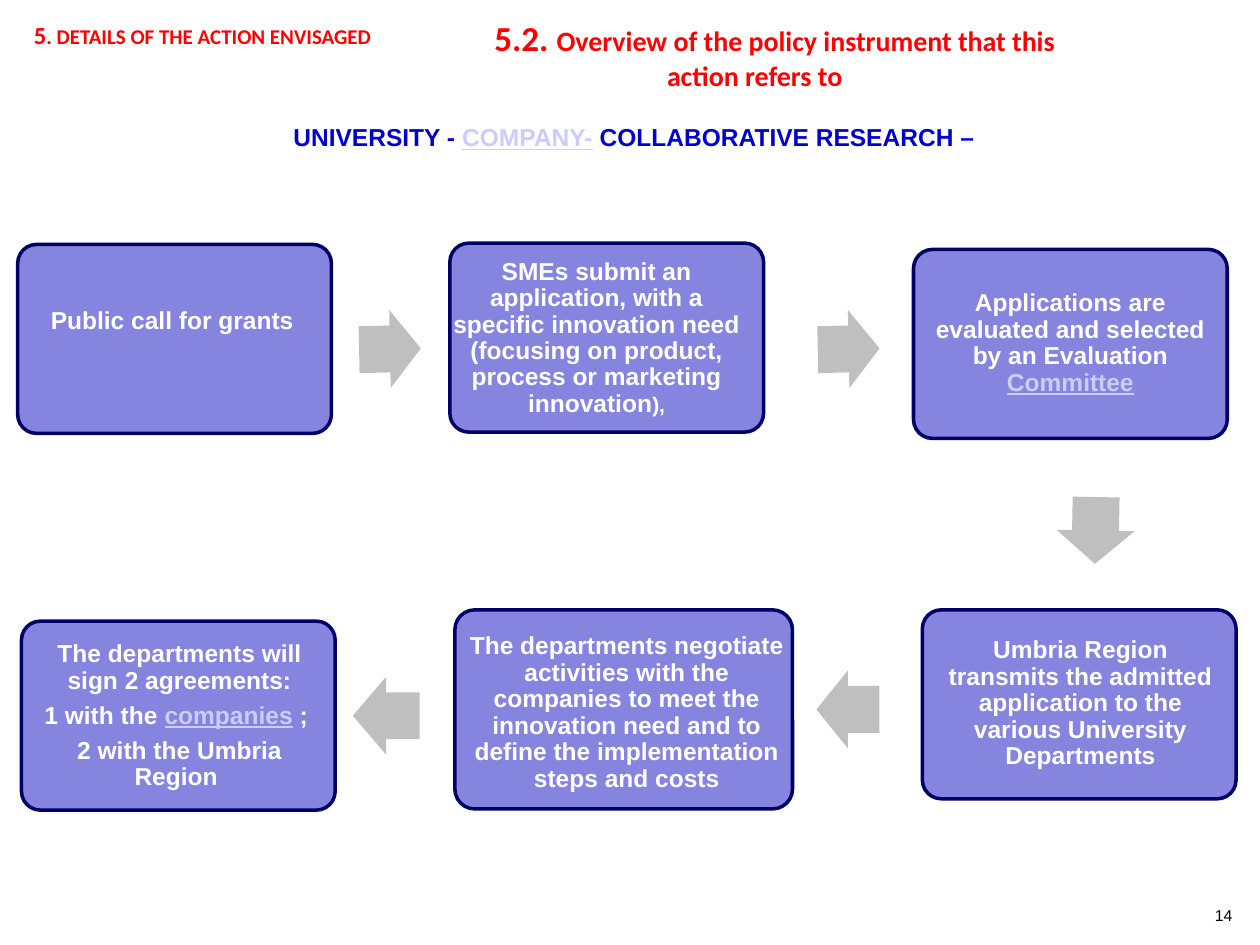
from pptx import Presentation
from pptx.dml.color import RGBColor
from pptx.enum.shapes import MSO_SHAPE
from pptx.enum.text import MSO_ANCHOR, PP_ALIGN
from pptx.util import Inches, Pt

BODY = {"name": "Arial", "size": Pt(14), "bold": True, "color": "FFFFFF"}
LINK = BODY | {"color": "CCCCFF", "underline": True}
BLUE = BODY | {"color": "0000CC"}
RED = BODY | {"name": "Calibri", "color": "FF0000"}
PAGE = {"name": "Arial", "size": Pt(9), "color": "000000"}
CENTER = {"alignment": PP_ALIGN.CENTER}
TIGHT = CENTER | {"line_spacing": 0.9, "space_after": Pt(5)}
SIZE = (2.49, 1.5)

STEPS = [
    ((0.14, 1.94, *SIZE), (0.19, 1.98, 2.41, 1.15),
     [[("Public call for grants ", BODY)]]),
    ((3.57, 1.93, *SIZE), (3.53, 1.98, 2.41, 1.41),
     [[("SMEs submit an application, with a specific innovation need "
        "(focusing on product, process or marketing innovation", BODY),
       ("),", BODY | {"size": Pt(12)})]]),
    ((7.25, 1.98, *SIZE), (7.29, 2.02, 2.41, 1.41),
     [[("Applications are evaluated and selected by an Evaluation ", BODY),
       ("Committee", LINK)]]),
    ((7.32, 4.84, *SIZE), (7.37, 4.88, 2.41, 1.41),
     [[("Umbria Region transmits the admitted application to the various "
        "University Departments", BODY)]]),
    ((3.61, 4.84, 2.68, 1.58), (3.66, 4.95, 2.63, 1.42),
     [[("The departments negotiate activities with the companies to meet "
        "the innovation need and to define the implementation steps and "
        "costs", BODY)]]),
    ((0.17, 4.93, *SIZE), (0.22, 4.98, 2.41, 1.41),
     [[("The departments will sign 2 agreements:", BODY)],
      [("1 with the ", BODY), ("companies", LINK), (" ; ", BODY)],
      [("2 with the Umbria Region ", BODY)]]),
]

ARROWS = [
    ((2.85, 2.46, 0.49, 0.62), 358.9),
    ((6.49, 2.46, 0.49, 0.62), 358.9),
    ((8.43, 3.9, 0.53, 0.62), 91),
    ((6.48, 5.32, 0.5, 0.62), 180),
    ((2.8, 5.37, 0.53, 0.62), 180),
]


def color(code):
    return RGBColor.from_string(code)


def place(box):
    return [Inches(n) for n in box]


def style(item, form):
    for key, value in form.items():
        if key == "color":
            item.color.rgb = color(value)
        else:
            setattr(item, key, value)


def add_shape(slide, kind, box, fill, edge=None):
    shape = slide.shapes.add_shape(kind, *place(box))
    shape.shadow.inherit = False
    shape.fill.solid()
    shape.fill.fore_color.rgb = color(fill)
    if edge:
        shape.line.color.rgb = color(edge)
        shape.line.width = Pt(2)
    else:
        shape.line.fill.background()
    return shape


def add_text(slide, box, paras, form, frame=None):
    text = slide.shapes.add_textbox(*place(box)).text_frame
    style(text, {"word_wrap": True} | (frame or {}))
    for i, runs in enumerate(paras):
        para = text.add_paragraph() if i else text.paragraphs[0]
        style(para, form)
        for words, look in runs:
            run = para.add_run()
            run.text = words
            style(run.font, look)
    return text


def add_step(slide, box, area, paras):
    card = add_shape(slide, MSO_SHAPE.ROUNDED_RECTANGLE, box, "8585E0", "000066")
    card.adjustments[0] = 0.1
    sides = ("left", "top", "right", "bottom")
    frame = {f"margin_{side}": Inches(0.06) for side in sides}
    frame["vertical_anchor"] = MSO_ANCHOR.MIDDLE
    add_text(slide, area, paras, TIGHT, frame)


def add_arrow(slide, box, turn):
    arrow = add_shape(slide, MSO_SHAPE.RIGHT_ARROW, box, "BFBFBF")
    arrow.adjustments[0] = 0.6
    arrow.adjustments[1] = 0.5
    arrow.rotation = turn


def add_heads(slide):
    add_text(slide, (0.17, 0.11, 3.85, 0.34),
             [[("5", RED),
               (". DETAILS OF THE ACTION ENVISAGED", RED | {"size": Pt(12)})]], {})
    title = add_text(
        slide, (3.28, 0.08, 5.42, 0.71),
        [[("5.2. ", RED | {"size": Pt(20)}),
          ("Overview of the policy instrument that this action refers to",
           RED | {"size": Pt(16)})]], CENTER)
    props = title.paragraphs[0]._p.get_or_add_pPr()
    props.set("indent", str(Inches(0.32)))
    add_text(slide, (2.23, 0.92, 5.91, 0.34),
             [[("UNIVERSITY - ", BLUE), ("COMPANY-", LINK),
               (" COLLABORATIVE RESEARCH –", BLUE)]], {})


def main():
    deck = Presentation()
    deck.slide_width, deck.slide_height = Inches(10), Inches(7.5)
    slide = deck.slides.add_slide(deck.slide_layouts[6])
    add_text(slide, (7.91, 7.14, 1.97, 0.31), [[("14", PAGE)]],
             {"alignment": PP_ALIGN.RIGHT})
    for step in STEPS:
        add_step(slide, *step)
    for arrow in ARROWS:
        add_arrow(slide, *arrow)
    add_heads(slide)
    deck.save("out.pptx")


if __name__ == "__main__":
    main()
